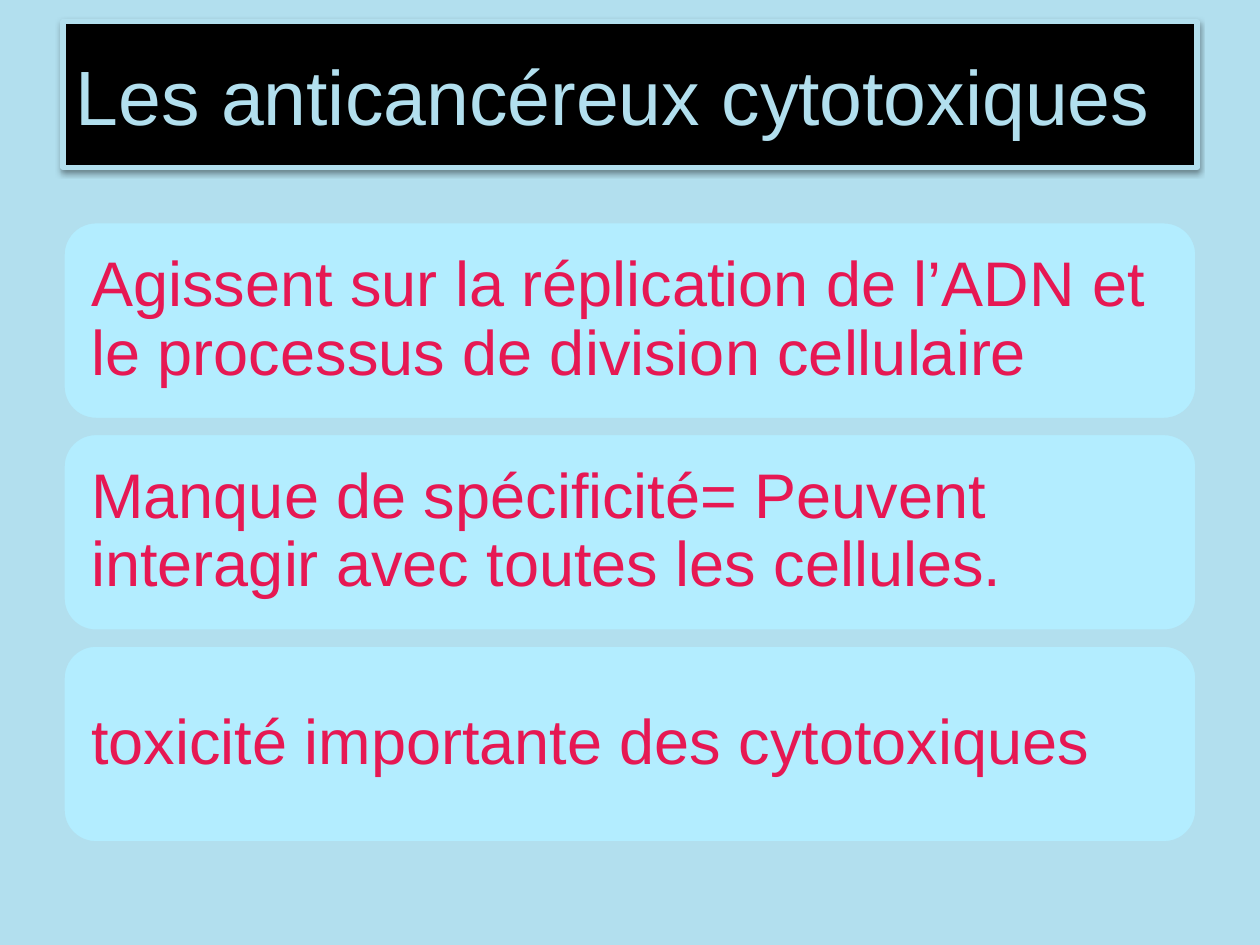
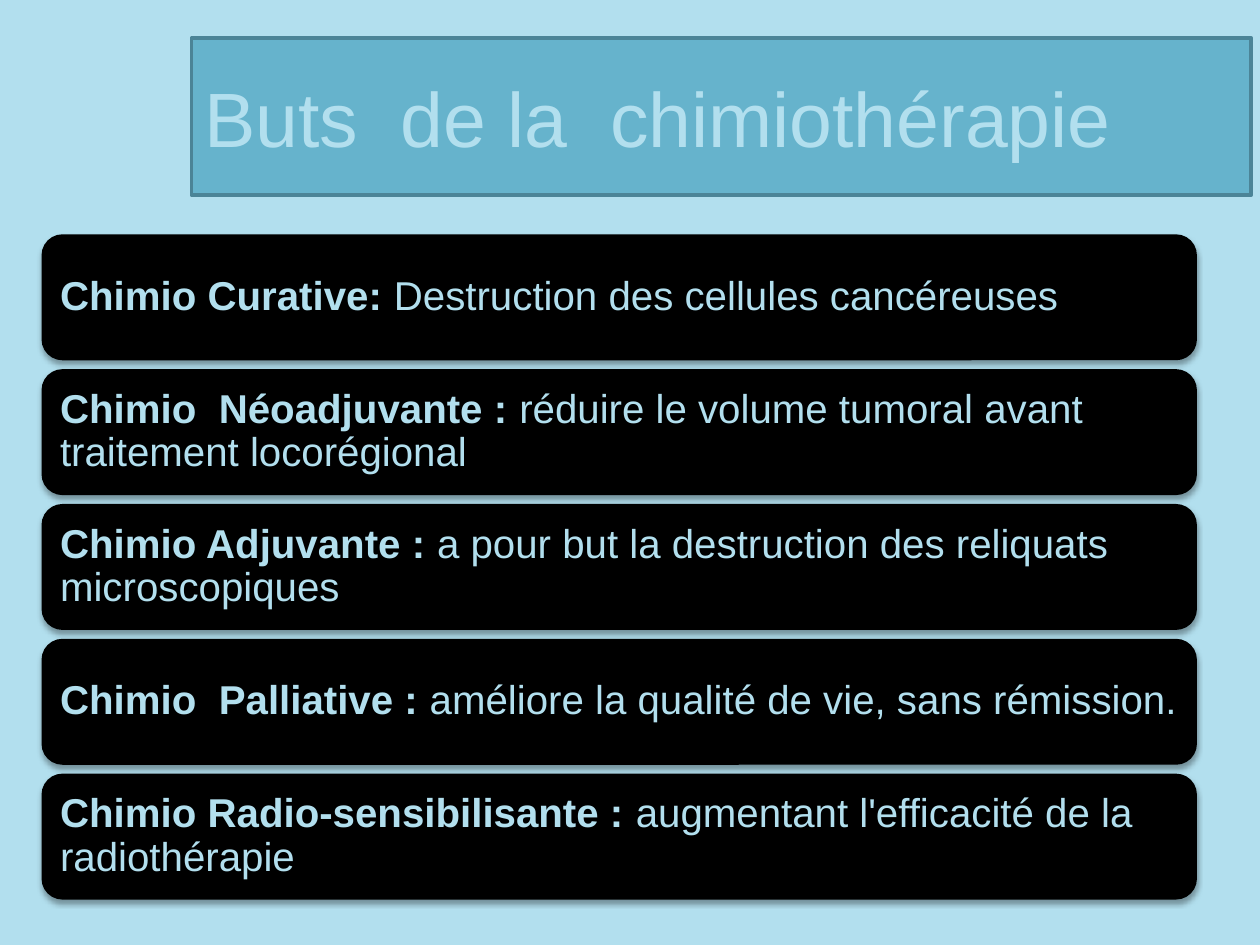
from dataclasses import dataclass
from typing import Optional

from lxml.etree import SubElement
from pptx import Presentation
from pptx.dml.color import RGBColor
from pptx.enum.shapes import MSO_SHAPE
from pptx.enum.text import MSO_ANCHOR as Anchor, MSO_AUTO_SIZE as Fit, PP_ALIGN as Align
from pptx.oxml.ns import qn
from pptx.util import Pt

PX = 9144  # 100 px to the inch
FONT = "Arial"
SKY, ICE, BLUE, TEAL = "B2DFEE", "B3EDFF", "66B3CC", "4B8497"
BLACK, ROSE = "000000", "E61853"


@dataclass(frozen=True)
class Shade:
    """Soft black shadow that falls straight down; lengths in points."""
    alpha: int
    blur: float
    drop: float


@dataclass(frozen=True)
class Look:
    fill: str
    ink: str
    size: int
    pad: int
    line: Optional[str] = None
    width: float = 0
    shade: Optional[Shade] = None
    lead: float = 1.0


@dataclass(frozen=True)
class Box:
    left: int
    top: int
    width: int
    height: int


@dataclass(frozen=True)
class Card:
    text: str
    head: str = ""


@dataclass(frozen=True)
class Page:
    title: str
    band: Box
    band_look: Look
    first: Box
    step: int
    card_look: Look
    cards: tuple[Card, ...]


PAGES = (
    Page(
        "Les anticancéreux cytotoxiques",
        Box(50, 17, 900, 116),
        Look(BLACK, SKY, 44, 10, SKY, 3, Shade(38, 3.1, 1.6)),
        Box(50, 176, 900, 157),
        168,
        Look(ICE, ROSE, 36, 15, SKY, 2, lead=0.9),
        (
            Card("Agissent sur la réplication de l’ADN et  le processus de division cellulaire"),
            Card("Manque de spécificité= Peuvent interagir avec toutes les cellules."),
            Card("toxicité importante des cytotoxiques"),
        ),
    ),
    Page(
        "Buts  de la  chimiothérapie",
        Box(152, 30, 841, 125),
        Look(BLUE, SKY, 44, 10, TEAL, 2),
        Box(33, 186, 917, 100),
        107,
        Look(BLACK, SKY, 23, 10, shade=Shade(35, 3.1, 1.8), lead=0.9),
        (
            Card("Destruction des cellules cancéreuses", "Chimio Curative: "),
            Card("réduire le volume tumoral avant traitement locorégional",
                 "Chimio  Néoadjuvante : "),
            Card("a pour but la destruction des reliquats microscopiques",
                 "Chimio Adjuvante : "),
            Card("améliore la qualité de vie, sans rémission.", "Chimio  Palliative : "),
            Card("augmentant l'efficacité de la radiothérapie",
                 "Chimio Radio-sensibilisante : "),
        ),
    ),
)


def paint(target, color: str) -> None:
    """Give a fill one solid colour."""
    target.solid()
    target.fore_color.rgb = RGBColor.from_string(color)


def cast(shape, shade: Optional[Shade]) -> None:
    """Replace the theme shadow with the given one, or with none."""
    shape.shadow.inherit = False
    if shade:
        effects = shape._element.spPr.find(qn("a:effectLst"))
        outer = SubElement(effects, qn("a:outerShdw"), blurRad=str(Pt(shade.blur)),
                           dist=str(Pt(shade.drop)), dir="5400000", rotWithShape="0")
        tint = SubElement(outer, qn("a:srgbClr"), val=BLACK)
        SubElement(tint, qn("a:alpha"), val=str(shade.alpha * 1000))


def dress(shape, look: Look, card: Card) -> None:
    """Style a shape and write its text."""
    paint(shape.fill, look.fill)
    if look.line:
        paint(shape.line.fill, look.line)
        shape.line.width = Pt(look.width)
    else:
        shape.line.fill.background()
    cast(shape, look.shade)

    frame = shape.text_frame
    frame.word_wrap = True
    frame.auto_size = Fit.NONE
    frame.vertical_anchor = Anchor.MIDDLE
    frame.margin_left = frame.margin_right = look.pad * PX
    frame.margin_top = frame.margin_bottom = min(look.pad, 5 if look.lead == 1 else 15) * PX

    para = frame.paragraphs[0]
    para.alignment = Align.LEFT
    para.line_spacing = look.lead
    para.font.name = FONT
    para.font.size = Pt(look.size)
    para.font.color.rgb = RGBColor.from_string(look.ink)
    if card.head:
        run = para.add_run()
        run.text = card.head
        run.font.bold = True
    para.add_run().text = card.text


def place(shape, box: Box) -> None:
    shape.left, shape.top = box.left * PX, box.top * PX
    shape.width, shape.height = box.width * PX, box.height * PX


def build(deck, page: Page) -> None:
    slide = deck.slides.add_slide(deck.slide_layouts[5])
    title = slide.shapes.title
    place(title, page.band)
    dress(title, page.band_look, Card(page.title))
    for row, card in enumerate(page.cards):
        shape = slide.shapes.add_shape(MSO_SHAPE.ROUNDED_RECTANGLE, 0, 0, 0, 0)
        first = page.first
        place(shape, Box(first.left, first.top + row * page.step, first.width, first.height))
        dress(shape, page.card_look, card)


def main() -> None:
    deck = Presentation()
    deck.slide_width, deck.slide_height = 1000 * PX, 750 * PX
    paint(deck.slide_master.background.fill, SKY)
    for page in PAGES:
        build(deck, page)
    deck.save("out.pptx")


if __name__ == "__main__":
    main()
